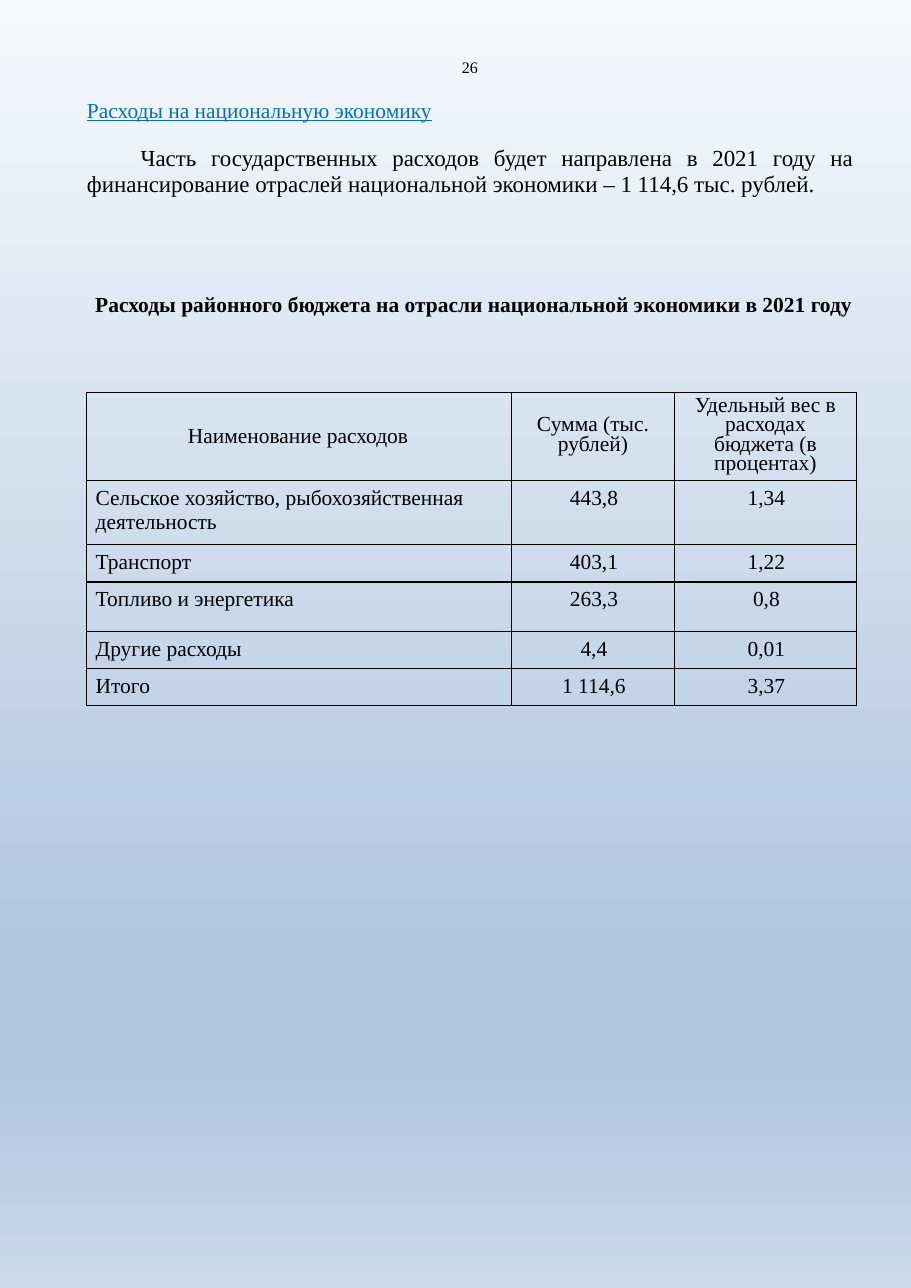
from dataclasses import dataclass

from lxml import etree
from pptx import Presentation
from pptx import util as u
from pptx.dml.color import RGBColor
from pptx.enum import text
from pptx.oxml.ns import qn

WIDTH, HEIGHT = u.Inches(8.27), u.Inches(11.69)
ALIGN = text.PP_ALIGN


@dataclass(frozen=True)
class Theme:
    font: str = "Times New Roman"
    ink: str = "000000"
    accent: str = "0070C0"
    number_size: float = 10.5
    body_size: float = 15
    base_size: float = 14
    border: float = 0.75
    heavy_border: float = 1.5
    sky: tuple = ((0, "F6F9FC"), (74, "B0C6E1"), (83, "B0C6E1"), (100, "CAD9EB"))


THEME = Theme()
LEFT = 9.55
TABLE_COLUMNS = (46.65, 17.89, 19.98)
TABLE_ROWS = (6.68, 4.97, 2.48, 3.88, 2.48, 2.48)
HEADER_SPACING = (None, 12.5, 12.7)
HEAVY_EDGE_ROW = 3
EXPENSES = (
    ("Наименование расходов", "Сумма (тыс. рублей)",
     "Удельный вес в расходах бюджета (в процентах)"),
    ("Сельское хозяйство, рыбохозяйственная деятельность", "443,8", "1,34"),
    ("Транспорт", "403,1", "1,22"),
    ("Топливо и энергетика", "263,3", "0,8"),
    ("Другие расходы", "4,4", "0,01"),
    ("Итого", "1 114,6", "3,37"),
)


def across(percent):
    return round(WIDTH * percent / 100)


def down(percent):
    return round(HEIGHT * percent / 100)


def place(shape, left, top, width, height):
    shape.left, shape.top = across(left), down(top)
    shape.width, shape.height = across(width), down(height)


def write(frame, words, size=THEME.base_size, align=ALIGN.LEFT, color=THEME.ink,
          bold=False, underline=False, spacing=None, indent=0):
    """Fill a text frame with one formatted paragraph."""
    frame.word_wrap = True
    frame.margin_left = frame.margin_right = 0
    frame.margin_top = frame.margin_bottom = 0
    para = frame.paragraphs[0]
    para.alignment = align
    if spacing:
        para.line_spacing = u.Pt(spacing)
    if indent:
        para._p.get_or_add_pPr().set("indent", str(across(indent)))
    span = para.add_run()
    span.text = words
    font = span.font
    font.name, font.size = THEME.font, u.Pt(size)
    font.bold, font.underline = bold, underline
    font.color.rgb = RGBColor.from_string(color)


def add_text(page, area, words, **style):
    box = page.shapes.add_textbox(0, 0, 0, 0)
    place(box, *area)
    write(box.text_frame, words, **style)


def add_heading(page, area, words):
    heading = page.shapes.title
    place(heading, *area)
    frame = heading.text_frame
    write(frame, words, color=THEME.accent, underline=True)
    frame.auto_size = text.MSO_AUTO_SIZE.NONE
    frame.vertical_anchor = text.MSO_ANCHOR.TOP


def paint_background(page):
    fill = page.background.fill
    fill.gradient()
    fill.gradient_angle = 270
    stops = page._element.find(".//" + qn("a:gsLst"))
    for stop in list(stops):
        stops.remove(stop)
    for position, color in THEME.sky:
        stop = etree.SubElement(stops, qn("a:gs"), pos=str(position * 1000))
        etree.SubElement(stop, qn("a:srgbClr"), val=color)


def add_borders(cell, top, bottom):
    widths = {"a:lnL": THEME.border, "a:lnR": THEME.border, "a:lnT": top, "a:lnB": bottom}
    properties = cell._tc.get_or_add_tcPr()
    for order, (edge, width) in enumerate(widths.items()):
        line = etree.Element(qn(edge), w=str(u.Pt(width)))
        fill = etree.SubElement(line, qn("a:solidFill"))
        etree.SubElement(fill, qn("a:srgbClr"), val=THEME.ink)
        properties.insert(order, line)


def format_cell(cell, words, row, column):
    header, label = row == 0, column == 0
    write(cell.text_frame, words,
          align=ALIGN.CENTER if header or not label else ALIGN.LEFT,
          spacing=HEADER_SPACING[column] if header else None)
    if label:
        cell.margin_left = across(1)
    elif not header:
        cell.margin_right = across(1)
    cell.vertical_anchor = text.MSO_ANCHOR.MIDDLE if header else text.MSO_ANCHOR.TOP
    cell.fill.background()
    top, bottom = (THEME.heavy_border if edge == HEAVY_EDGE_ROW else THEME.border
                   for edge in (row, row + 1))
    add_borders(cell, top, bottom)


def add_expense_table(page, left, top):
    holder = page.shapes.add_table(
        len(TABLE_ROWS), len(TABLE_COLUMNS), across(left), down(top),
        across(sum(TABLE_COLUMNS)), down(sum(TABLE_ROWS)))
    table = holder.table
    table.first_row = table.horz_banding = False
    for column, width in zip(table.columns, TABLE_COLUMNS):
        column.width = across(width)
    for row, height in zip(table.rows, TABLE_ROWS):
        row.height = down(height)
    for row, values in enumerate(EXPENSES):
        for column, words in enumerate(values):
            format_cell(table.cell(row, column), words, row, column)


def main():
    deck = Presentation()
    deck.slide_width, deck.slide_height = WIDTH, HEIGHT
    page = deck.slides.add_slide(deck.slide_layouts[5])
    paint_background(page)

    # Page number and heading
    add_text(page, (50.7, 4.45, 3, 1.5), "26", size=THEME.number_size)
    add_heading(page, (LEFT, 7.53, 84.16, 2.2), "Расходы на национальную экономику")

    # Introduction and table caption
    add_text(page, (LEFT, 11.21, 84.16, 4.28),
             "Часть государственных расходов будет направлена в 2021 году на "
             "финансирование отраслей национальной экономики – 1 114,6 тыс. рублей.",
             size=THEME.body_size, align=ALIGN.JUSTIFY, spacing=17.3, indent=5.9)
    add_text(page, (LEFT, 22.58, 84.96, 2.2),
             "Расходы районного бюджета на отрасли национальной экономики в 2021 году",
             align=ALIGN.CENTER, bold=True, spacing=17)

    # Expenses by branch
    add_expense_table(page, 9.5, 30.45)
    deck.save("out.pptx")


if __name__ == "__main__":
    main()
